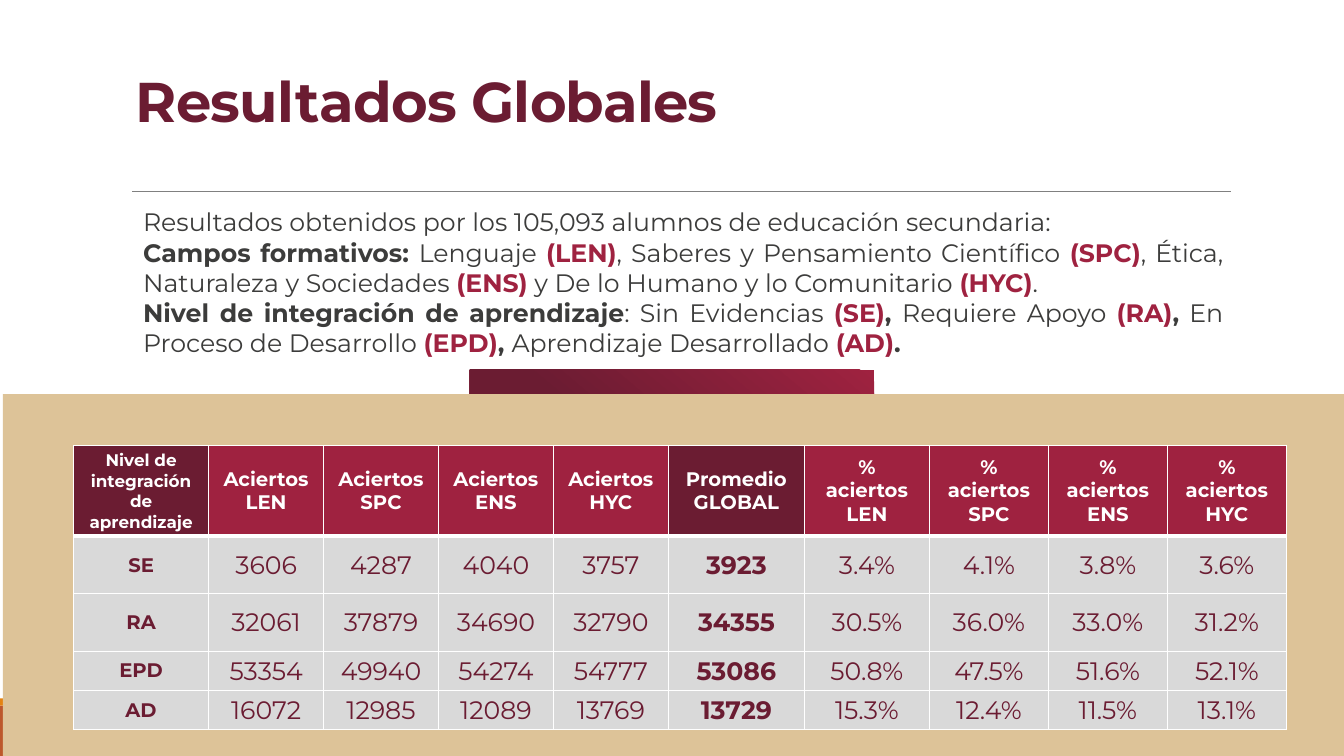
from lxml import etree
from pptx import Presentation
from pptx.dml.color import RGBColor
from pptx.enum.shapes import MSO_CONNECTOR as Connector, MSO_SHAPE as Shape
from pptx.enum.text import MSO_ANCHOR as Anchor, PP_ALIGN as Align
from pptx.oxml.ns import qn
from pptx.util import Inches, Pt

WIDTH, HEIGHT = 13.33, 7.5
FONT = "Montserrat"
COLORS = {
    "wine": "6B1C32", "red": "9F2240", "sand": "DDC398", "ink": "3C3C3B",
    "rust": "BD582C", "orange": "E48312", "rule": "808080",
    "cell": "D9D9D9", "white": "FFFFFF",
}

TITLE = "Resultados Globales"
# Each span: text, colour, bold
INTRO = [
    [("Resultados obtenidos por los 105,093 alumnos de educación secundaria:", "ink", False)],
    [
        ("Campos formativos: ", "ink", True), ("Lenguaje ", "ink", False),
        ("(LEN)", "red", True), (", Saberes y Pensamiento Científico ", "ink", False),
        ("(SPC)", "red", True), (", Ética, Naturaleza y Sociedades ", "ink", False),
        ("(ENS)", "red", True), (" y De lo Humano y lo Comunitario ", "ink", False),
        ("(HYC)", "red", True), (".", "ink", False),
    ],
    [
        ("Nivel de integración de aprendizaje", "ink", True), (": Sin Evidencias ", "ink", False),
        ("(SE)", "red", True), (", ", "ink", True), ("Requiere Apoyo ", "ink", False),
        ("(RA)", "red", True), (",", "ink", True), (" En Proceso de Desarrollo ", "ink", False),
        ("(EPD)", "red", True), (", ", "ink", True), ("Aprendizaje Desarrollado ", "ink", False),
        ("(AD)", "red", True), (".", "ink", True),
    ],
]

FIELDS = ["LEN", "SPC", "ENS", "HYC"]
HEADER = (
    ["Nivel de integración de aprendizaje"]
    + [f"Aciertos\n{field}" for field in FIELDS]
    + ["Promedio GLOBAL"]
    + [f"% aciertos\n{field}" for field in FIELDS]
)
RESULTS = [
    ["SE", "3606", "4287", "4040", "3757", "3923", "3.4%", "4.1%", "3.8%", "3.6%"],
    ["RA", "32061", "37879", "34690", "32790", "34355", "30.5%", "36.0%", "33.0%", "31.2%"],
    ["EPD", "53354", "49940", "54274", "54777", "53086", "50.8%", "47.5%", "51.6%", "52.1%"],
    ["AD", "16072", "12985", "12089", "13769", "13729", "15.3%", "12.4%", "11.5%", "13.1%"],
]
LEVEL, AVERAGE = 0, 5
COLUMN_WIDTHS = [1.34] + [1.14] * 4 + [1.35, 1.24] + [1.18] * 3
ROW_HEIGHTS = [0.86, 0.57, 0.57, 0.39, 0.39]
TABLE_LEFT, TABLE_TOP = 0.73, 4.42


def rgb(name):
    return RGBColor.from_string(COLORS[name])


def style(font, size, color, bold):
    font.name, font.size, font.bold = FONT, Pt(size), bold
    font.color.rgb = rgb(color)


def add_band(page, left, top, width, height, color):
    band = page.shapes.add_shape(
        Shape.RECTANGLE, Inches(left), Inches(top), Inches(width), Inches(height))
    band.shadow.inherit = False
    band.line.fill.background()
    band.fill.solid()
    band.fill.fore_color.rgb = rgb(color)
    return band


def add_tab(page):
    """Gradient tab that peeks out above the sand panel."""
    fill = add_band(page, 4.66, 3.67, 4.01, 0.32, "wine").fill
    fill.gradient()
    fill.gradient_angle = 230
    for stop, (color, position) in zip(fill.gradient_stops, [("red", 0), ("wine", 0.8)]):
        stop.color.rgb = rgb(color)
        stop.position = position


def add_rule(page):
    y = Inches(1.9)
    rule = page.shapes.add_connector(Connector.STRAIGHT, Inches(1.31), y, Inches(12.21), y)
    rule.line.color.rgb = rgb("rule")
    rule.line.width = Pt(0.5)
    etree.SubElement(rule._element.spPr, qn("a:effectLst"))


def add_box(page, left, top, width, height):
    box = page.shapes.add_textbox(Inches(left), Inches(top), Inches(width), Inches(height))
    box.text_frame.word_wrap = True
    return box.text_frame


def add_title(page):
    frame = add_box(page, 1.25, 0.58, 8.14, 0.8)
    frame.vertical_anchor = Anchor.BOTTOM
    frame.text = TITLE
    para = frame.paragraphs[0]
    para.line_spacing = 0.85
    span = para.runs[0]
    style(span.font, 40, "wine", True)
    span.font._element.set("spc", "-50")


def add_intro(page):
    frame = add_box(page, 1.25, 2, 10.98, 1.62)
    for index, spans in enumerate(INTRO):
        para = frame.add_paragraph() if index else frame.paragraphs[0]
        para.alignment = Align.JUSTIFY
        para._p.get_or_add_pPr().set("marL", str(Inches(0.07)))
        for text, color, bold in spans:
            span = para.add_run()
            span.text = text
            style(span.font, 18, color, bold)


def set_borders(cell, top, bottom):
    """White cell borders; top and bottom widths in points."""
    properties = cell._tc.get_or_add_tcPr()
    sides = [("lnL", 1), ("lnR", 1), ("lnT", top), ("lnB", bottom)]
    for index, (side, width) in enumerate(sides):
        line = etree.Element(qn(f"a:{side}"), w=str(Pt(width)))
        fill = etree.SubElement(line, qn("a:solidFill"))
        etree.SubElement(fill, qn("a:srgbClr"), val=COLORS["white"])
        properties.insert(index, line)


def cell_look(row, column):
    """Fill, text colour, size and weight by place in the table."""
    if row == 0:
        fill = "wine" if column in (LEVEL, AVERAGE) else "red"
        return fill, "white", 12 if column == LEVEL else 14, True
    if column == LEVEL:
        return "cell", "wine", 14, True
    return "cell", "wine", 18, column == AVERAGE


def add_results(page):
    rows = [HEADER] + RESULTS
    table = page.shapes.add_table(
        len(rows), len(HEADER), Inches(TABLE_LEFT), Inches(TABLE_TOP),
        Inches(sum(COLUMN_WIDTHS)), Inches(sum(ROW_HEIGHTS))).table
    for column, width in zip(table.columns, COLUMN_WIDTHS):
        column.width = Inches(width)
    for row, height in zip(table.rows, ROW_HEIGHTS):
        row.height = Inches(height)
    for r, values in enumerate(rows):
        for c, value in enumerate(values):
            cell = table.cell(r, c)
            fill, color, size, bold = cell_look(r, c)
            cell.text = value
            cell.vertical_anchor = Anchor.MIDDLE
            cell.fill.solid()
            cell.fill.fore_color.rgb = rgb(fill)
            if r and c != LEVEL:
                cell.margin_left = cell.margin_right = cell.margin_top = Inches(0.01)
                cell.margin_bottom = 0
            for para in cell.text_frame.paragraphs:
                para.alignment = Align.CENTER
                style(para.runs[0].font, size, color, bold)
            set_borders(cell, 3 if r == 1 else 1, 3 if r == 0 else 1)


def main():
    deck = Presentation()
    deck.slide_width, deck.slide_height = Inches(WIDTH), Inches(HEIGHT)
    page = deck.slides.add_slide(deck.slide_layouts[6])
    add_band(page, 0, 7, WIDTH, 0.5, "rust")
    add_band(page, 0, 6.93, WIDTH, 0.07, "orange")
    add_rule(page)
    add_tab(page)
    add_band(page, 0.03, 3.91, WIDTH, 3.59, "sand")
    add_title(page)
    add_intro(page)
    add_results(page)
    deck.save("out.pptx")


if __name__ == "__main__":
    main()
